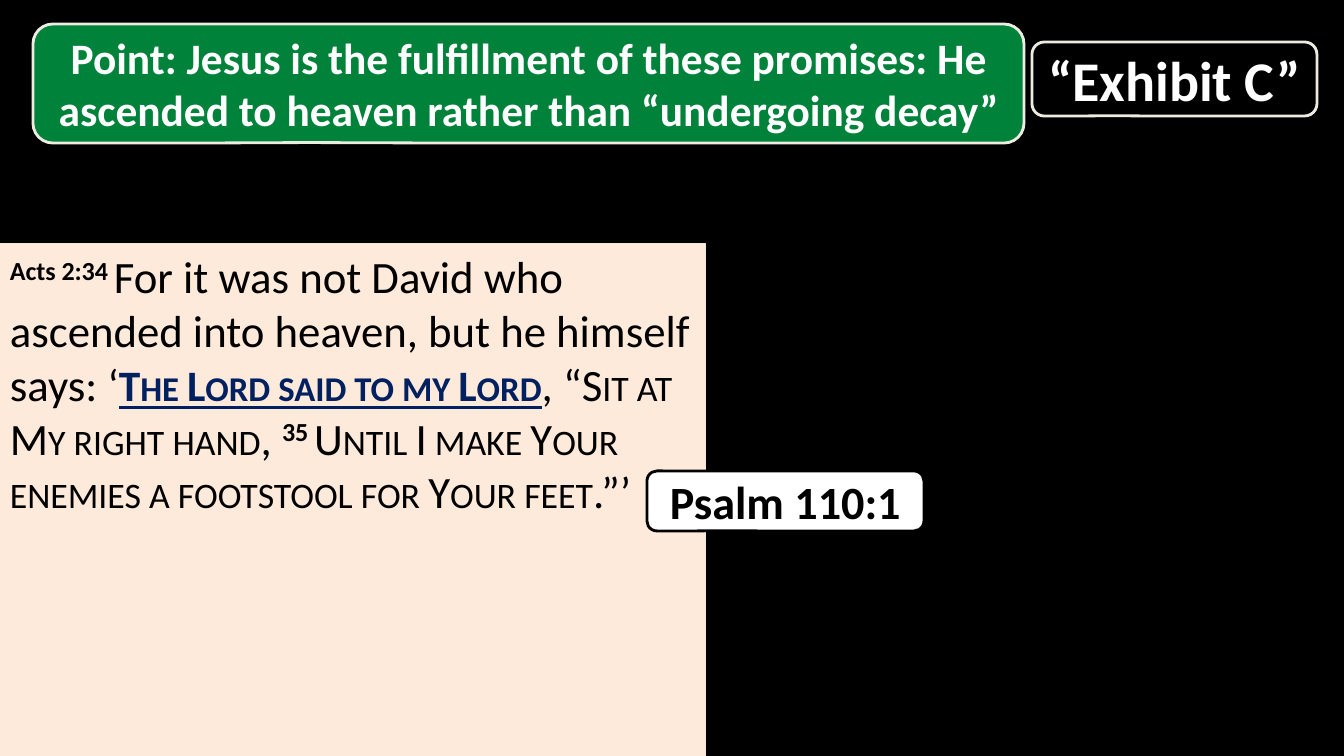
import pptx
import pptx.dml.color
import pptx.enum.shapes
import pptx.enum.text
import pptx.util

PX = 914400 / 100.8
COLORS = {
    "black": "000000",
    "white": "FFFFFF",
    "cream": "EEECE1",
    "peach": "FDEADA",
    "green": "00823B",
    "navy": "002060",
}
SHAPES = pptx.enum.shapes.MSO_SHAPE
ALIGN = pptx.enum.text.PP_ALIGN
ANCHOR = pptx.enum.text.MSO_ANCHOR


def px(n):
    return pptx.util.Emu(round(n * PX))


def rgb(name):
    return pptx.dml.color.RGBColor.from_string(COLORS[name])


class Deck:
    """Holds the style and the current slide."""

    font = "Calibri"
    callout_adjustments = (-0.222, 0.496, 0.167)

    def __init__(self, width, height):
        self.prs = pptx.Presentation()
        self.prs.slide_width, self.prs.slide_height = px(width), px(height)

    def slide(self, background):
        self.s = self.prs.slides.add_slide(self.prs.slide_layouts[6])
        fill = self.s.background.fill
        fill.solid()
        fill.fore_color.rgb = rgb(background)

    def box(self, kind, at, fill, line, weight, align, anchor):
        sp = self.s.shapes.add_shape(kind, *map(px, at))
        sp.shadow.inherit = False
        sp.fill.solid()
        sp.fill.fore_color.rgb = rgb(fill)
        sp.line.color.rgb = rgb(line)
        sp.line.width = pptx.util.Pt(weight)
        tf = sp.text_frame
        tf.word_wrap = True
        tf.vertical_anchor = anchor
        tf.paragraphs[0].alignment = align
        return sp

    def run(self, p, text, size, color, xml=None, **format_values):
        r = p.add_run()
        r.text = text
        values = {"name": self.font, "size": pptx.util.Pt(size), **format_values}
        for key, value in values.items():
            setattr(r.font, key, value)
        r.font.color.rgb = rgb(color)
        for key, value in (xml or {}).items():
            r.font._element.set(key, value)

    def callout(self, at, text, size, fill, line, color):
        sp = self.box(SHAPES.ROUNDED_RECTANGULAR_CALLOUT, at, fill, line, 2,
                      ALIGN.CENTER, ANCHOR.MIDDLE)
        for i, value in enumerate(self.callout_adjustments):
            sp.adjustments[i] = value
        self.run(sp.text_frame.paragraphs[0], text, size, color, bold=True)

    def passage(self, at, fill, line, runs):
        sp = self.box(SHAPES.RECTANGLE, at, fill, line, 0.75, ALIGN.LEFT, ANCHOR.TOP)
        for text, values in runs:
            self.run(sp.text_frame.paragraphs[0], text,
                     **{"size": 32, "color": "black", **values})


def main():
    plain = {}
    verse_number = {"bold": True, "xml": {"baseline": "30000"}}
    small_caps = {"xml": {"cap": "small"}}
    emphasis = {"size": 31, "color": "navy", "bold": True, "underline": True, **small_caps}

    deck = Deck(1344, 756)
    deck.slide("black")
    deck.passage((0, 244, 706, 513), "peach", "cream", [
        ("Acts 2:34 ", verse_number),
        ("For it was not David who ascended into heaven, but he himself says: ‘", plain),
        ("The Lord said to my Lord", emphasis),
        (", “", plain),
        ("Sit at My right hand", small_caps),
        (", ", plain),
        ("35 ", verse_number),
        ("Until I make Your enemies a footstool for Your feet", small_caps),
        (".”’", plain),
    ])
    deck.callout((33, 24, 991, 119),
                 "Point: Jesus is the fulfillment of these promises: He ascended to "
                 "heaven rather than “undergoing decay”", 31, "green", "cream", "white")
    deck.callout((1032, 42, 285, 74), "“Exhibit C”", 40, "black", "cream", "white")
    deck.callout((647, 471, 277, 60), "Psalm 110:1", 33, "white", "black", "black")
    deck.prs.save("out.pptx")


if __name__ == "__main__":
    main()
